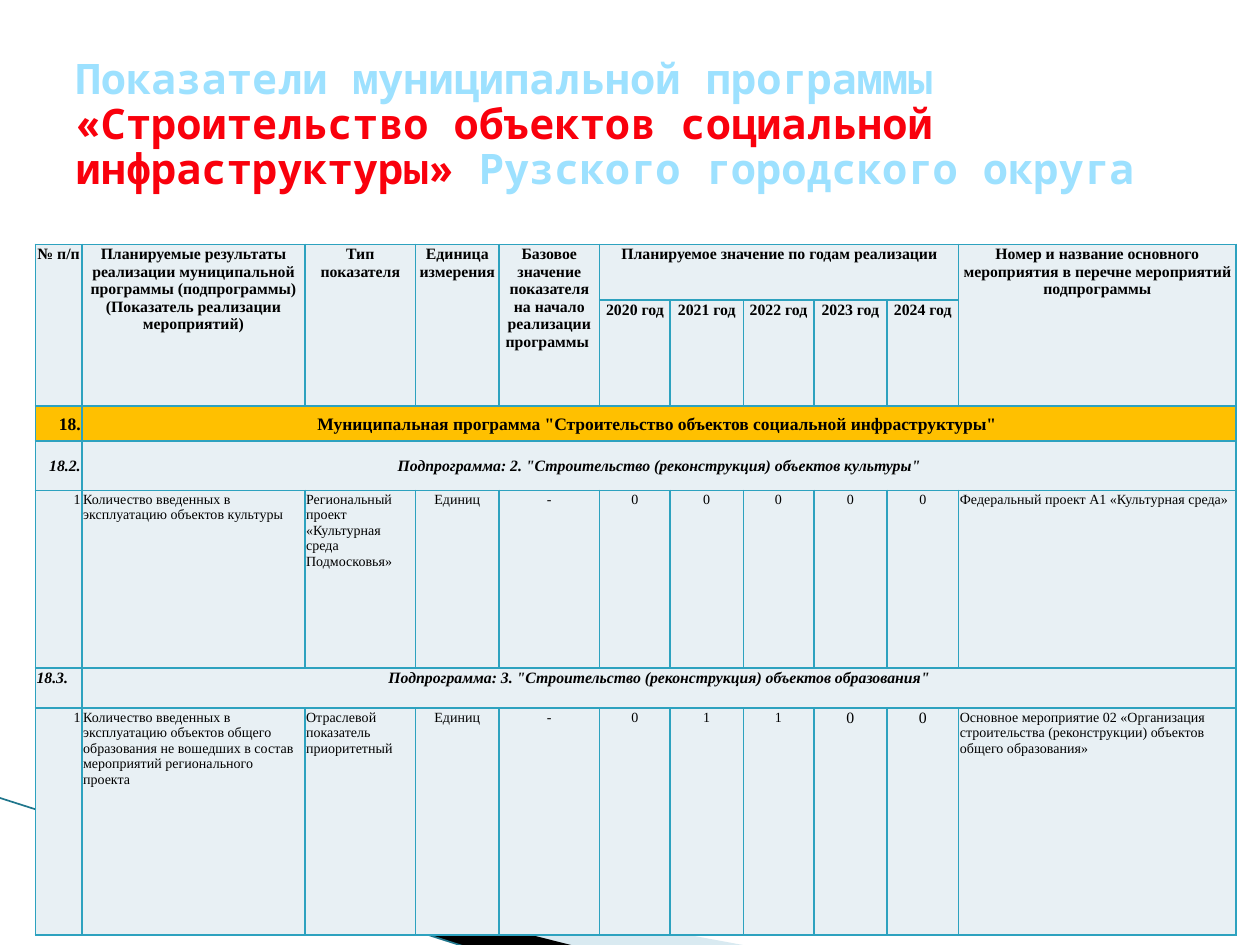
from lxml import etree
from pptx import Presentation
from pptx.dml.color import RGBColor
from pptx.enum.shapes import MSO_CONNECTOR
from pptx.enum.text import MSO_ANCHOR, MSO_AUTO_SIZE, PP_ALIGN
from pptx.oxml.ns import qn
from pptx.util import Inches, Pt

LEFT, MID, RIGHT = PP_ALIGN.LEFT, PP_ALIGN.CENTER, PP_ALIGN.RIGHT
TOP, CENTER = MSO_ANCHOR.TOP, MSO_ANCHOR.MIDDLE
STRAIGHT, NO_FIT = MSO_CONNECTOR.STRAIGHT, MSO_AUTO_SIZE.NONE

THEME = {
    "sky": "9DE1FF", "red": "F9000C", "ink": "000000", "pale": "E8F0F4",
    "gold": "FFC000", "edge": "2DA2BF", "wave": "A0CBDC", "curve": "1F768C",
    "mono": "Noto Sans Mono", "serif": "Times New Roman",
    "title": 24, "band": 10, "head": 9, "body": 8,
}


def color(name):
    return RGBColor.from_string(THEME[name])


def write(cell, text, size, align, bold=False, italic=False, anchor=TOP):
    cell.text = text
    cell.vertical_anchor = anchor
    para = cell.text_frame.paragraphs[0]
    para.alignment = align
    font = para.font
    font.name, font.size = THEME["serif"], Pt(THEME[size])
    font.bold, font.italic = bold, italic
    font.color.rgb = color("ink")


deck = Presentation()
deck.slide_width, deck.slide_height = Inches(10), Inches(7.5)
slide = deck.slides.add_slide(deck.slide_layouts[5])
shapes = slide.shapes

waves = [
    ("wave", [(0.55, 6.51), (5.95, 7.51), (4.56, 7.51), (0.55, 6.5)]),
    ("ink", [(0.53, 6.49), (4.57, 7.51), (3.72, 7.52), (0.54, 6.5)]),
]
for name, spots in waves:
    points = [(Inches(x), Inches(y)) for x, y in spots]
    form = shapes.build_freeform(*points[0])
    form.add_line_segments(points[1:])
    wave = form.convert_to_shape()
    wave.shadow.inherit = False
    wave.fill.solid()
    wave.fill.fore_color.rgb = color(name)
    wave.line.fill.background()
    if name == "wave":
        tint = wave._element.spPr.find(".//" + qn("a:srgbClr"))
        etree.SubElement(tint, qn("a:alpha"), val="40000")

curve = shapes.add_connector(
    STRAIGHT, Inches(-0.01), Inches(6.33), Inches(3.71), Inches(7.52))
curve.line.color.rgb = color("curve")
curve.line.width = Pt(0.95)
etree.SubElement(curve._element.spPr, qn("a:effectLst"))

widths = [0.37, 1.77, 0.88, 0.66, 0.8, 0.56, 0.58, 0.56, 0.58, 0.57, 2.2]
heights = [0.44, 0.44, 0.28, 0.39, 1.41, 0.32, 1.8]
grid = shapes.add_table(
    len(heights), len(widths), Inches(0.28), Inches(1.94),
    Inches(sum(widths)), Inches(sum(heights))).table
for col, width in zip(grid.columns, widths):
    col.width = Inches(width)
for row, height in zip(grid.rows, heights):
    row.height = Inches(height)

for r in range(len(heights)):
    for c in range(len(widths)):
        cell = grid.cell(r, c)
        cell.margin_left = cell.margin_right = cell.margin_top = Inches(0.01)
        cell.margin_bottom = 0
        props = cell._tc.get_or_add_tcPr()
        for side in ("a:lnL", "a:lnR", "a:lnT", "a:lnB"):
            edge = etree.SubElement(props, qn(side), w=str(Pt(1)))
            fill = etree.SubElement(edge, qn("a:solidFill"))
            etree.SubElement(fill, qn("a:srgbClr"), val=THEME["edge"])
        cell.fill.solid()
        cell.fill.fore_color.rgb = color("gold" if r == 2 else "pale")

heads = {
    0: "№ п/п",
    1: "Планируемые результаты реализации муниципальной программы "
       "(подпрограммы) (Показатель реализации мероприятий)",
    2: "Тип показателя",
    3: "Единица измерения",
    4: "Базовое значение показателя на начало реализации программы ",
    10: "Номер и название основного мероприятия в перечне мероприятий "
        "подпрограммы",
}
for c, text in heads.items():
    grid.cell(0, c).merge(grid.cell(1, c))
    write(grid.cell(0, c), text, "head", MID, bold=True)
grid.cell(0, 5).merge(grid.cell(0, 9))
write(grid.cell(0, 5), "Планируемое значение по годам реализации",
      "head", MID, bold=True)
for c in range(5, 10):
    write(grid.cell(1, c), f"{2015 + c} год", "head", MID, bold=True)

bands = [
    (2, "18.", 'Муниципальная программа "Строительство объектов '
     'социальной инфраструктуры" ', "band", RIGHT, False, CENTER),
    (3, "18.2.", 'Подпрограмма: 2. "Строительство (реконструкция) '
     'объектов культуры"', "head", RIGHT, True, CENTER),
    (5, "18.3.", 'Подпрограмма: 3. "Строительство (реконструкция) '
     'объектов образования"', "head", LEFT, True, TOP),
]
for r, mark, text, size, align, slant, anchor in bands:
    grid.cell(r, 1).merge(grid.cell(r, 10))
    write(grid.cell(r, 0), mark, size, align, True, slant, anchor)
    write(grid.cell(r, 1), text, size, MID, True, slant, anchor)

goals = {
    4: ["1", "Количество введенных в эксплуатацию объектов культуры",
        "Региональный проект «Культурная среда Подмосковья»", "Единиц", "-",
        "0", "0", "0", "0", "0", "Федеральный проект A1 «Культурная среда»"],
    6: ["1", "Количество введенных в эксплуатацию объектов общего "
        "образования не вошедших в состав мероприятий регионального проекта",
        "Отраслевой показатель приоритетный", "Единиц", "-",
        "0", "1", "1", "0", "0",
        "Основное мероприятие 02 «Организация строительства "
        "(реконструкции) объектов общего образования»"],
}
aligns = [RIGHT, LEFT, LEFT] + [MID] * 7 + [LEFT]
for r, texts in goals.items():
    for c, (text, align) in enumerate(zip(texts, aligns)):
        size = "head" if r == 6 and c in (8, 9) else "body"
        write(grid.cell(r, c), text, size, align)

title = shapes.title
title.left, title.top = Inches(0.5), Inches(0.3)
title.width, title.height = Inches(9), Inches(1.4)
frame = title.text_frame
frame.auto_size = NO_FIT
frame.vertical_anchor = CENTER
para = frame.paragraphs[0]
para.alignment = LEFT
para.line_spacing = 0.9
para.font.name, para.font.size = THEME["mono"], Pt(THEME["title"])
para.font.bold = True
for text, name in [
    ("Показатели муниципальной программы ", "sky"),
    ("«Строительство объектов социальной инфраструктуры» ", "red"),
    ("Рузского городского округа", "sky"),
]:
    run = para.add_run()
    run.text = text
    run.font.color.rgb = color(name)
shapes._spTree.append(title._element)

deck.save("out.pptx")
